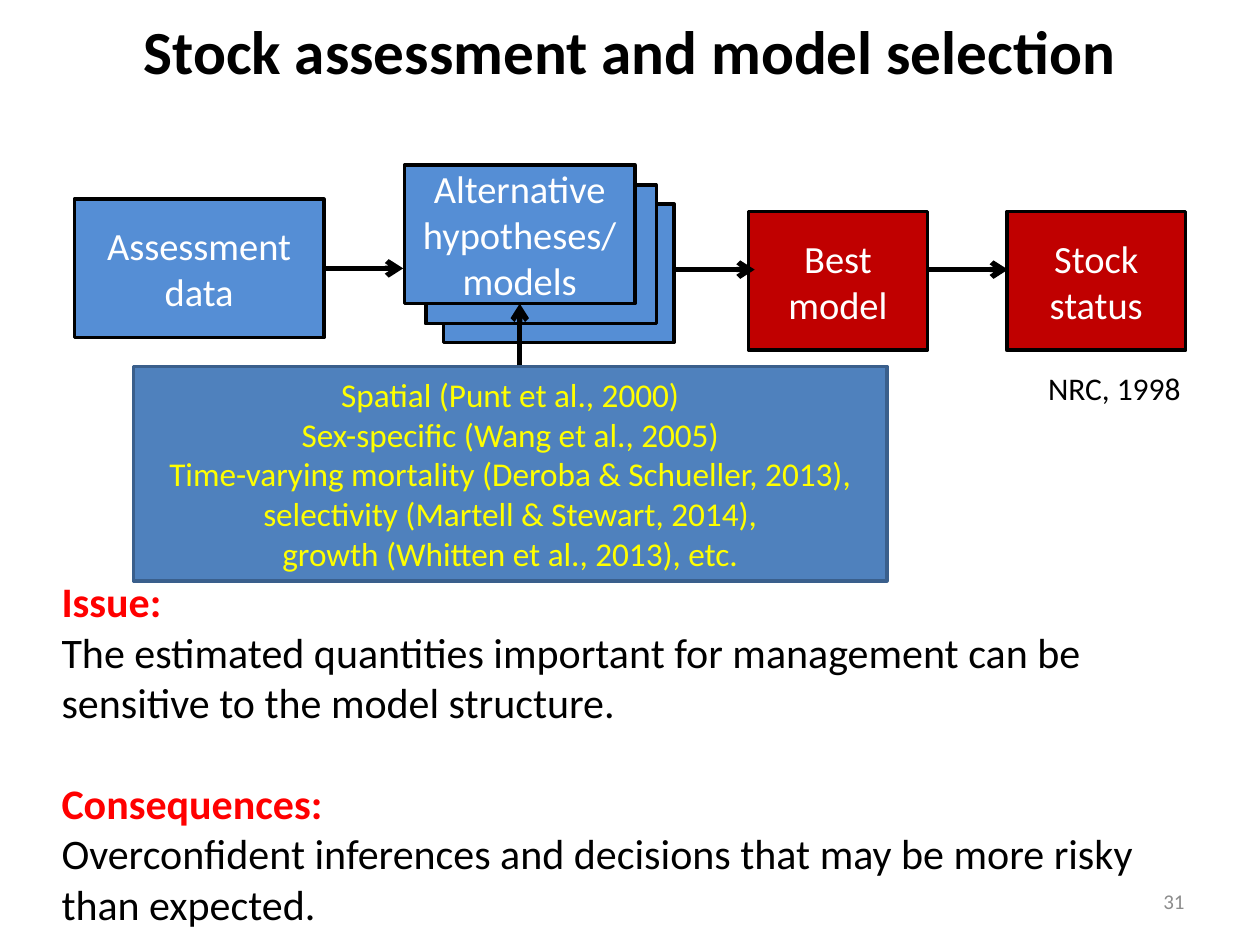
from dataclasses import dataclass

import pptx
import pptx.dml.color
import pptx.enum.shapes
import pptx.enum.text
import pptx.oxml.ns
import pptx.util
from lxml import etree

ALIGN = pptx.enum.text.PP_ALIGN
ANCHOR = pptx.enum.text.MSO_ANCHOR
RIGHT, BOTTOM = 3, 2  # connection sites of a rectangle


@dataclass(frozen=True)
class Theme:
    font: str = "Calibri"
    ink: str = "000000"
    light: str = "FFFFFF"
    heading: str = "FF0000"
    muted: str = "8C8C8C"
    source: str = "558ED5"
    outcome: str = "C00000"
    panel: str = "4F81BD"
    panel_edge: str = "3A5F8C"
    panel_text: str = "FFFF00"
    title_size: int = 35
    body_size: int = 24
    box_size: int = 22
    panel_size: int = 19
    citation_size: int = 18
    number_size: int = 12
    outline: int = 2
    arrow: int = 3


def rgb(code):
    return pptx.dml.color.RGBColor.from_string(code)


class SlideBuilder:
    """Places elements on a grid of 100 columns by 75 rows."""

    COLUMNS, ROWS = 100, 75

    def __init__(self, deck, theme):
        self.theme = theme
        self.column = deck.slide_width / self.COLUMNS
        self.row = deck.slide_height / self.ROWS
        self.slide = deck.slides.add_slide(deck.slide_layouts[5])

    def grid(self, *cells):
        """Turn alternating columns and rows into lengths."""
        units = (self.column, self.row)
        return [pptx.util.Emu(round(cell * units[i % 2])) for i, cell in enumerate(cells)]

    def set_text(self, frame, lines, size, color, align=ALIGN.LEFT,
                 anchor=ANCHOR.TOP, bold=False, wrap=True):
        frame.word_wrap = wrap
        frame.auto_size = pptx.enum.text.MSO_AUTO_SIZE.NONE
        frame.vertical_anchor = anchor
        frame.text = "\n".join(lines)
        for paragraph in frame.paragraphs:
            paragraph.alignment = align
            for run in paragraph.runs:
                run.font.name = self.theme.font
                run.font.size = pptx.util.Pt(size)
                run.font.bold = bold
                run.font.color.rgb = rgb(color)

    def title(self, text, place):
        heading = self.slide.shapes.title
        heading.left, heading.top, heading.width, heading.height = self.grid(*place)
        self.set_text(heading.text_frame, [text], self.theme.title_size, self.theme.ink,
                      ALIGN.CENTER, ANCHOR.MIDDLE, bold=True)

    def text(self, lines, place, size, color, **style):
        frame = self.slide.shapes.add_textbox(*self.grid(*place)).text_frame
        self.set_text(frame, lines, size, color, **style)
        return frame

    def sections(self, sections, place):
        """Set (heading, statement) pairs with one line of space between them."""
        size = self.theme.body_size
        lines = [line for section in sections for line in section]
        frame = self.text(lines, place, size, self.theme.ink)
        for index, heading in enumerate(frame.paragraphs[::2]):
            heading.runs[0].font.bold = True
            heading.runs[0].font.color.rgb = rgb(self.theme.heading)
            if index:
                heading.space_before = pptx.util.Pt(size * 1.2)

    def box(self, lines, place, fill, edge=None, size=None, color=None):
        theme = self.theme
        box = self.slide.shapes.add_shape(
            pptx.enum.shapes.MSO_SHAPE.RECTANGLE, *self.grid(*place))
        box.shadow.inherit = False
        box.fill.solid()
        box.fill.fore_color.rgb = rgb(fill)
        box.line.color.rgb = rgb(edge or theme.ink)
        box.line.width = pptx.util.Pt(theme.outline)
        if lines:
            self.set_text(box.text_frame, lines, size or theme.box_size,
                          color or theme.light, ALIGN.CENTER, ANCHOR.MIDDLE)
        return box

    def arrow(self, start, end, begin_at=None, end_at=None):
        """Draw an arrow; begin_at and end_at are (box, site) pairs to join."""
        arrow = self.slide.shapes.add_connector(
            pptx.enum.shapes.MSO_CONNECTOR.STRAIGHT, *self.grid(*start, *end))
        if begin_at:
            arrow.begin_connect(*begin_at)
        if end_at:
            arrow.end_connect(*end_at)
        arrow.line.color.rgb = rgb(self.theme.ink)
        arrow.line.width = pptx.util.Pt(self.theme.arrow)
        qn = pptx.oxml.ns.qn
        properties = arrow.element.spPr
        etree.SubElement(properties.find(qn("a:ln")), qn("a:tailEnd"), type="arrow")
        etree.SubElement(properties, qn("a:effectLst"))


def main():
    deck = pptx.Presentation()
    deck.slide_width, deck.slide_height = pptx.util.Inches(10), pptx.util.Inches(7.5)
    theme = Theme()
    page = SlideBuilder(deck, theme)

    page.title("Stock assessment and model selection", (0, 0.5, 100, 6.9))
    page.sections([
        ("Issue:", "The estimated quantities important for management can be "
                   "sensitive to the model structure."),
        ("Consequences:", "Overconfident inferences and decisions that may be "
                          "more risky than expected."),
    ], (3.9, 45.2, 91.7, 29.3))

    box_height = 11
    data = page.box(["Assessment data"], (5.9, 15.8, 19.8, box_height), theme.source)
    for label, left in (("Best model", 59.4), ("Stock status", 79.9)):
        page.box([label], (left, 16.8, 14.2, box_height), theme.outcome)
    for left, top in ((35.2, 16.2), (33.8, 14.7)):
        page.box([], (left, top, 18.3, box_height), theme.source)
    hypotheses = page.box(["Alternative hypotheses/models"],
                          (32.1, 13.1, 18.3, box_height), theme.source)

    page.arrow((25.7, 21.3), (32, 21.3), begin_at=(data, RIGHT))
    for left in (53.6, 73.7):
        page.arrow((left, 21.4), (left + 6.3, 21.4))

    page.text(["NRC, 1998"], (82.2, 28.8, 12.7, 4), theme.citation_size, theme.ink,
              wrap=False)
    page.text(["31"], (71.7, 69.5, 23.3, 4), theme.number_size, theme.muted,
              align=ALIGN.RIGHT, anchor=ANCHOR.MIDDLE)

    page.box([
        "Spatial (Punt et al., 2000)",
        "Sex-specific (Wang et al., 2005)",
        "Time-varying mortality (Deroba & Schueller, 2013), "
        "selectivity (Martell & Stewart, 2014),",
        "growth (Whitten et al., 2013), etc.",
    ], (10.6, 29.1, 59.8, 17), theme.panel, theme.panel_edge,
        theme.panel_size, theme.panel_text)
    page.arrow((41.25, 29), (41.25, 24.1), end_at=(hypotheses, BOTTOM))

    deck.save("out.pptx")


if __name__ == "__main__":
    main()
